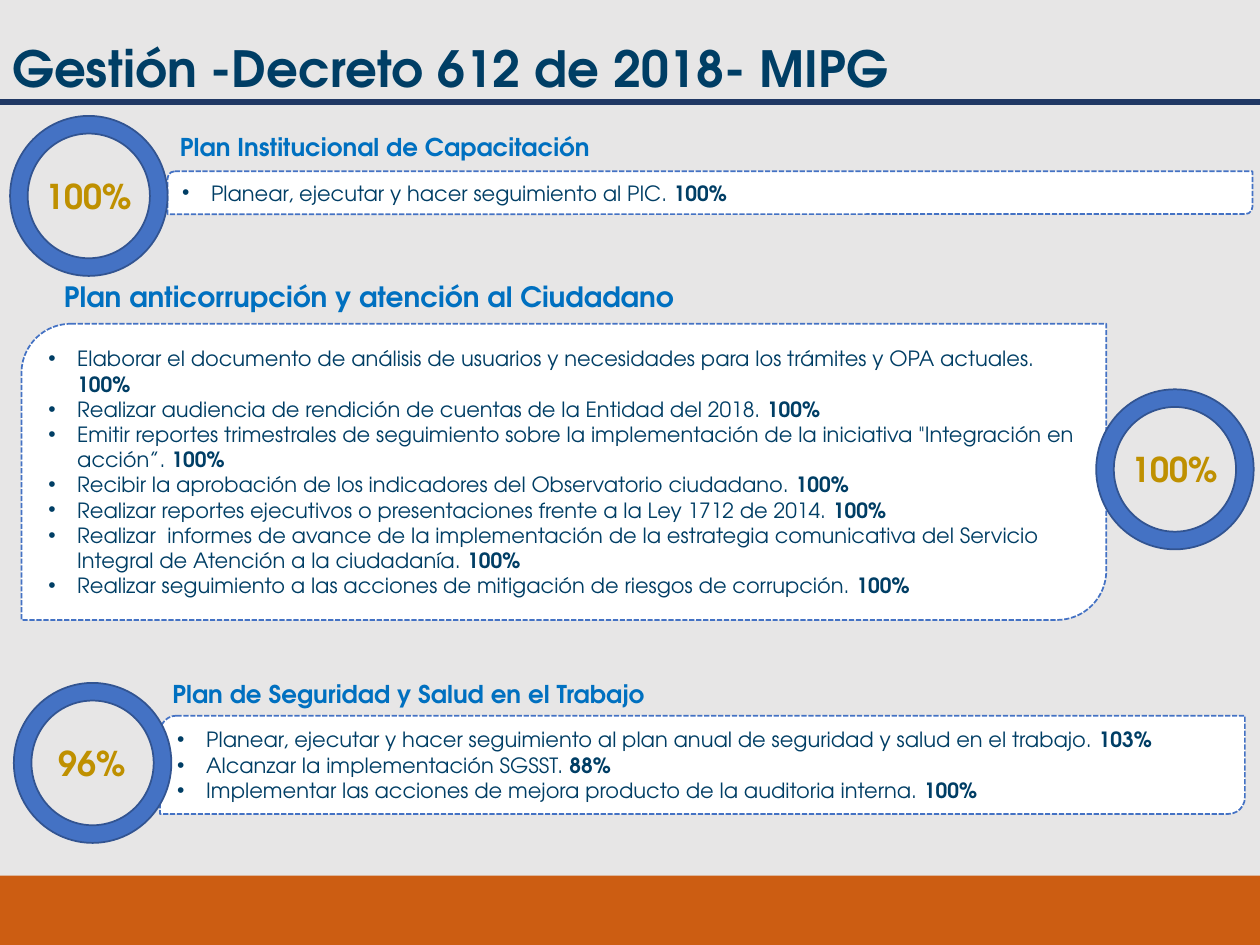
import collections

import lxml.etree
import pptx
import pptx.dml.color
import pptx.enum.dml
import pptx.enum.shapes
import pptx.enum.text
import pptx.oxml.ns
import pptx.util

COLUMNS, ROWS = 100, 75
CELL = pptx.util.Inches(0.1)
FONT = "TeX Gyre Adventor"
COLORS = {
    "background": "E7E6E6",
    "footer": "CC5D12",
    "rule": "203864",
    "panel": "FFFFFF",
    "accent": "4472C4",
    "ring_line": "325491",
    "text": "003E65",
    "heading": "0070C0",
    "percent": "BF9000",
}
SHAPES = pptx.enum.shapes.MSO_SHAPE
ALIGN = pptx.enum.text.PP_ALIGN
ANCHOR = pptx.enum.text.MSO_ANCHOR
AUTO_SIZE = pptx.enum.text.MSO_AUTO_SIZE

Box = collections.namedtuple("Box", "left top width height")
Plan = collections.namedtuple("Plan", "box heading size heading_box panel_box ring_box percent tasks")

PLANS = [
    Plan(Box(0, 9.2, 100, 12.7), "Plan Institucional de Capacitación", 14,
         Box(13.3, 0.8, 74.2, 3.4), Box(13.3, 4.4, 86.1, 3.4), Box(0.8, 0, 12.5, 12.7), "100%",
         [("Planear, ejecutar y hacer seguimiento al PIC. ", "100%")]),
    Plan(Box(0, 21.7, 100, 27.5), "Plan anticorrupción y atención al Ciudadano", 16,
         Box(4.1, 0, 59, 3.7), Box(1.7, 4, 86.1, 23.5), Box(87, 9.2, 12.5, 12.7), "100%",
         [("Elaborar el documento de análisis de usuarios y necesidades para los trámites y OPA actuales. ", "100%"),
          ("Realizar audiencia de rendición de cuentas de la Entidad del 2018. ", "100%"),
          ("Emitir reportes trimestrales de seguimiento sobre la implementación de la iniciativa "
           "\"Integración en acción”. ", "100%"),
          ("Recibir la aprobación de los indicadores del Observatorio ciudadano. ", "100%"),
          ("Realizar reportes ejecutivos o presentaciones frente a la Ley 1712 de 2014. ", "100%"),
          ("Realizar  informes de avance de la implementación de la estrategia comunicativa "
           "del Servicio Integral de Atención a la ciudadanía. ", "100%"),
          ("Realizar seguimiento a las acciones de mitigación de riesgos de corrupción. ", "100%")]),
    Plan(Box(0, 53.4, 100, 13.5), "Plan de Seguridad y Salud en el Trabajo", 14,
         Box(12.7, 0, 74.2, 3.4), Box(12.7, 3.4, 86.1, 7.8), Box(1.1, 0.8, 12.5, 12.7), "96%",
         [("Planear, ejecutar y hacer seguimiento al plan anual de seguridad y salud en el trabajo. ", "103%"),
          ("Alcanzar la implementación SGSST. ", "88%"),
          ("Implementar las acciones de mejora producto de la auditoria interna. ", "100%")]),
]


def color(name):
    return pptx.dml.color.RGBColor.from_string(COLORS[name])


def cells(*counts):
    return [round(count * CELL) for count in counts]


def within(outer, inner):
    """Turn a box relative to outer into a box on the slide."""
    return Box(outer.left + inner.left, outer.top + inner.top, inner.width, inner.height)


def add_span(para, text, size=12, fill="text", bold=False):
    span = para.add_run()
    span.text = text
    span.font.name = FONT
    span.font.size = pptx.util.Pt(size)
    span.font.bold = bold
    span.font.color.rgb = color(fill)


def add_label(shapes, box, text, align=ALIGN.LEFT, anchor=ANCHOR.TOP, grow=True, **style):
    frame = shapes.add_textbox(*cells(*box)).text_frame
    frame.word_wrap = True
    frame.auto_size = AUTO_SIZE.SHAPE_TO_FIT_TEXT if grow else AUTO_SIZE.NONE
    frame.vertical_anchor = anchor
    para = frame.paragraphs[0]
    para.alignment = align
    add_span(para, text, bold=True, **style)


def add_block(shapes, kind, box, fill, line=None):
    block = shapes.add_shape(kind, *cells(*box))
    block.shadow.inherit = False
    block.fill.solid()
    block.fill.fore_color.rgb = color(fill)
    if line:
        block.line.color.rgb = color(line)
        block.line.width = pptx.util.Pt(1)
    else:
        block.line.fill.background()
    return block


def add_bullet(para):
    properties = para._p.get_or_add_pPr()
    indent = pptx.util.Inches(0.23)
    properties.set("marL", str(indent))
    properties.set("indent", str(-indent))
    for tag, key, value in (("a:buFont", "typeface", "Arial"), ("a:buChar", "char", "•")):
        lxml.etree.SubElement(properties, pptx.oxml.ns.qn(tag)).set(key, value)


def add_panel(page, box, tasks):
    panel = add_block(page.shapes, SHAPES.ROUND_2_DIAG_RECTANGLE, box, "panel", "accent")
    panel.line.dash_style = pptx.enum.dml.MSO_LINE.SQUARE_DOT
    frame = panel.text_frame
    frame.word_wrap = True
    frame.auto_size = AUTO_SIZE.SHAPE_TO_FIT_TEXT
    frame.vertical_anchor = ANCHOR.MIDDLE
    for index, (task, percent) in enumerate(tasks):
        para = frame.add_paragraph() if index else frame.paragraphs[0]
        para.alignment = ALIGN.LEFT
        add_bullet(para)
        add_span(para, task)
        add_span(para, percent, bold=True)


def add_ring(page, box, percent):
    group = page.shapes.add_group_shape()
    ring = add_block(group.shapes, SHAPES.DONUT, box, "accent", "ring_line")
    ring.adjustments[0] = 0.112
    label_box = within(box, Box(0, box.height / 3, box.width, box.height / 3))
    add_label(group.shapes, label_box, percent, align=ALIGN.CENTER, size=19.5, fill="percent")


def add_plan(page, plan):
    add_panel(page, within(plan.box, plan.panel_box), plan.tasks)
    add_label(page.shapes, within(plan.box, plan.heading_box), plan.heading,
              size=plan.size, fill="heading")
    add_ring(page, within(plan.box, plan.ring_box), plan.percent)


def add_header(page, box, title):
    """Place the title over a rule on the lower edge of the box."""
    bottom = box.top + box.height
    rule = page.shapes.add_connector(
        pptx.enum.shapes.MSO_CONNECTOR.STRAIGHT,
        *cells(box.left, bottom, box.left + box.width, bottom))
    rule.line.color.rgb = color("rule")
    rule.line.width = pptx.util.Pt(3)
    lxml.etree.SubElement(rule._element.spPr, pptx.oxml.ns.qn("a:effectLst"))
    add_label(page.shapes, within(box, Box(0, 2.8, 84.4, 5.1)), title,
              anchor=ANCHOR.MIDDLE, grow=False, size=28.5)


def main():
    deck = pptx.Presentation()
    deck.slide_width, deck.slide_height = cells(COLUMNS, ROWS)
    page = deck.slides.add_slide(deck.slide_layouts[6])
    page.background.fill.solid()
    page.background.fill.fore_color.rgb = color("background")
    add_block(page.shapes, SHAPES.RECTANGLE, Box(0, 69.5, COLUMNS, 5.5), "footer")
    add_header(page, Box(0, 0, COLUMNS, 8.1), "Gestión -Decreto 612 de 2018- MIPG")
    for plan in PLANS:
        add_plan(page, plan)
    deck.save("out.pptx")


if __name__ == "__main__":
    main()
